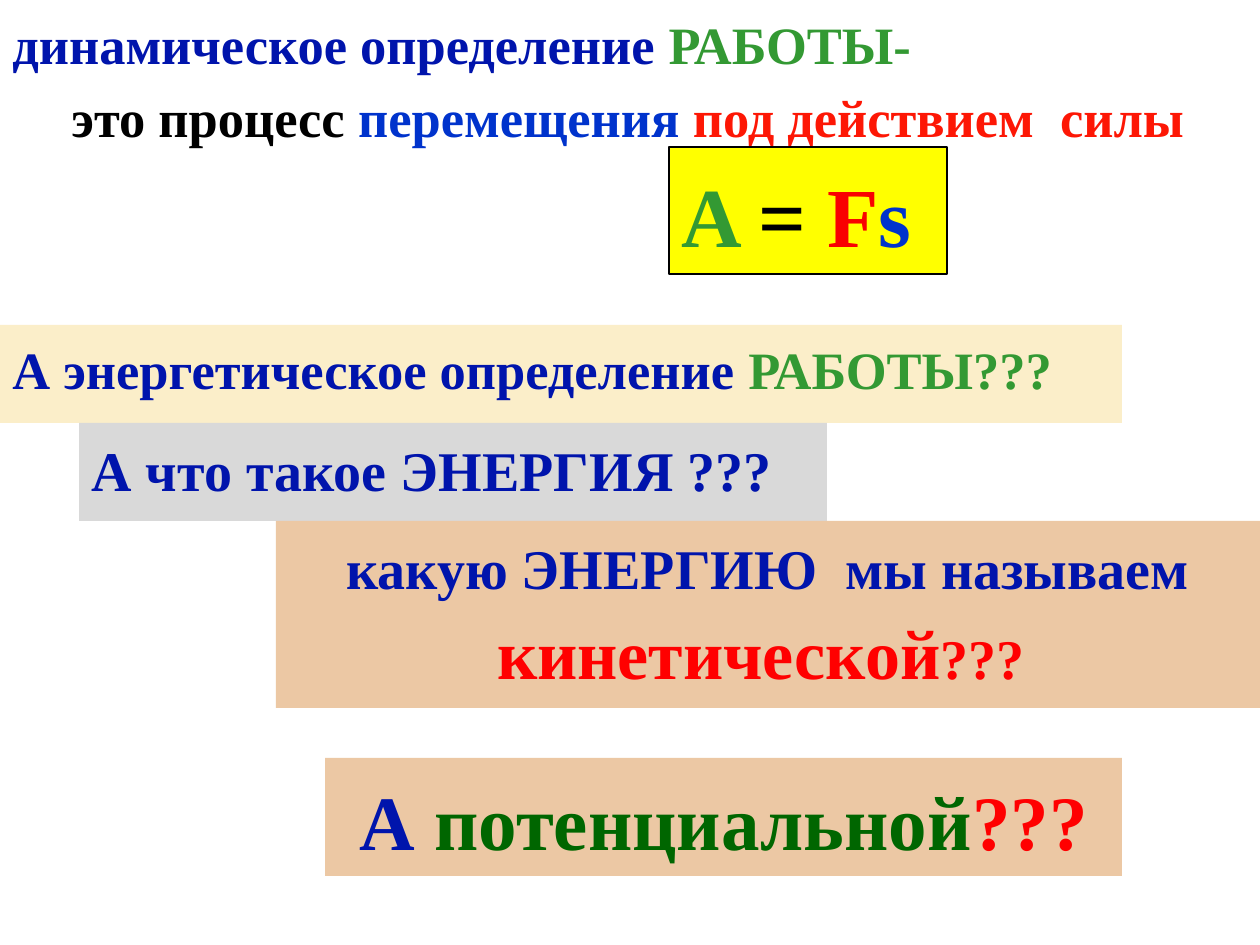
from pptx import Presentation
from pptx.dml.color import RGBColor
from pptx.enum.shapes import MSO_SHAPE
from pptx.enum.text import MSO_ANCHOR, PP_ALIGN
from pptx.util import Emu, Pt

RECTANGLE = MSO_SHAPE.RECTANGLE
TOP, MIDDLE = MSO_ANCHOR.TOP, MSO_ANCHOR.MIDDLE
LEFT, CENTER = PP_ALIGN.LEFT, PP_ALIGN.CENTER

NAVY, BLUE, BLACK = "0014AC", "0033CC", "000000"
GREEN, DARK_GREEN = "339933", "006600"
RED, BRIGHT_RED, FORCE_RED = "FF0000", "FD1705", "F90101"
YELLOW, CREAM, GREY, PEACH = "FFFF00", "FBEEC9", "D9D9D9", "ECC8A4"


def px(length):
    return Emu(round(length * 914400 / 126))


def color(hex_value):
    return RGBColor.from_string(hex_value)


class SlideBuilder:
    font = "Times New Roman"
    line_spacing = 1.1

    def __init__(self, slide):
        self.slide = slide

    def add_words(self, shape, runs, align=LEFT, anchor=TOP, after=0):
        """Fill a shape with one paragraph of (text, size, colour) runs."""
        frame = shape.text_frame
        frame.word_wrap = True
        frame.vertical_anchor = anchor
        para = frame.paragraphs[0]
        para.alignment = align
        para.line_spacing = self.line_spacing
        para.space_after = Pt(after)
        for text, size, hex_value in runs:
            span = para.add_run()
            span.text = text
            span.font.name = self.font
            span.font.size = Pt(size)
            span.font.bold = True
            span.font.color.rgb = color(hex_value)

    def text(self, bounds, runs, **layout):
        box = self.slide.shapes.add_textbox(*map(px, bounds))
        self.add_words(box, runs, **layout)

    def panel(self, bounds, fill, runs, line=None, **layout):
        box = self.slide.shapes.add_shape(RECTANGLE, *map(px, bounds))
        box.shadow.inherit = False
        box.fill.solid()
        box.fill.fore_color.rgb = color(fill)
        if line:
            box.line.color.rgb = color(line)
            box.line.width = Pt(0.75)
        else:
            box.line.fill.background()
        self.add_words(box, runs, **layout)


def main():
    deck = Presentation()
    deck.slide_width, deck.slide_height = px(1260), px(945)
    builder = SlideBuilder(deck.slides.add_slide(deck.slide_layouts[6]))

    # Dynamic definition of work
    builder.text((0, 0, 984, 98), [
        ("динамическое определение ", 30, NAVY), ("РАБОТЫ-", 30, GREEN)])
    builder.text((59, 69, 1191, 88), [
        ("это процесс ", 30, BLACK), ("перемещения", 30, BLUE),
        (" под действием  силы", 30, BRIGHT_RED)], anchor=MIDDLE)

    # Formula
    builder.panel((669, 147, 278, 127), YELLOW, [
        ("A ", 48, GREEN), ("= ", 48, BLACK),
        ("F", 48, FORCE_RED), ("s", 48, BLUE)], line=BLACK, after=10)

    # Questions about energy
    builder.panel((0, 325, 1122, 98), CREAM, [
        ("А энергетическое определение ", 30, NAVY),
        ("РАБОТЫ???", 30, GREEN)])
    builder.panel((79, 423, 748, 98), GREY, [
        ("А что такое ЭНЕРГИЯ ???", 32, NAVY)])
    builder.panel((276, 521, 984, 187), PEACH, [
        ("какую ЭНЕРГИЮ  мы называем ", 32, NAVY),
        ("кинетической", 40, RED), ("??? ", 32, RED)], align=CENTER)
    builder.panel((325, 758, 797, 118), PEACH, [
        ("А ", 44, NAVY), ("потенциальной", 44, DARK_GREEN),
        ("???", 44, RED)], align=CENTER)

    deck.save("out.pptx")


if __name__ == "__main__":
    main()
